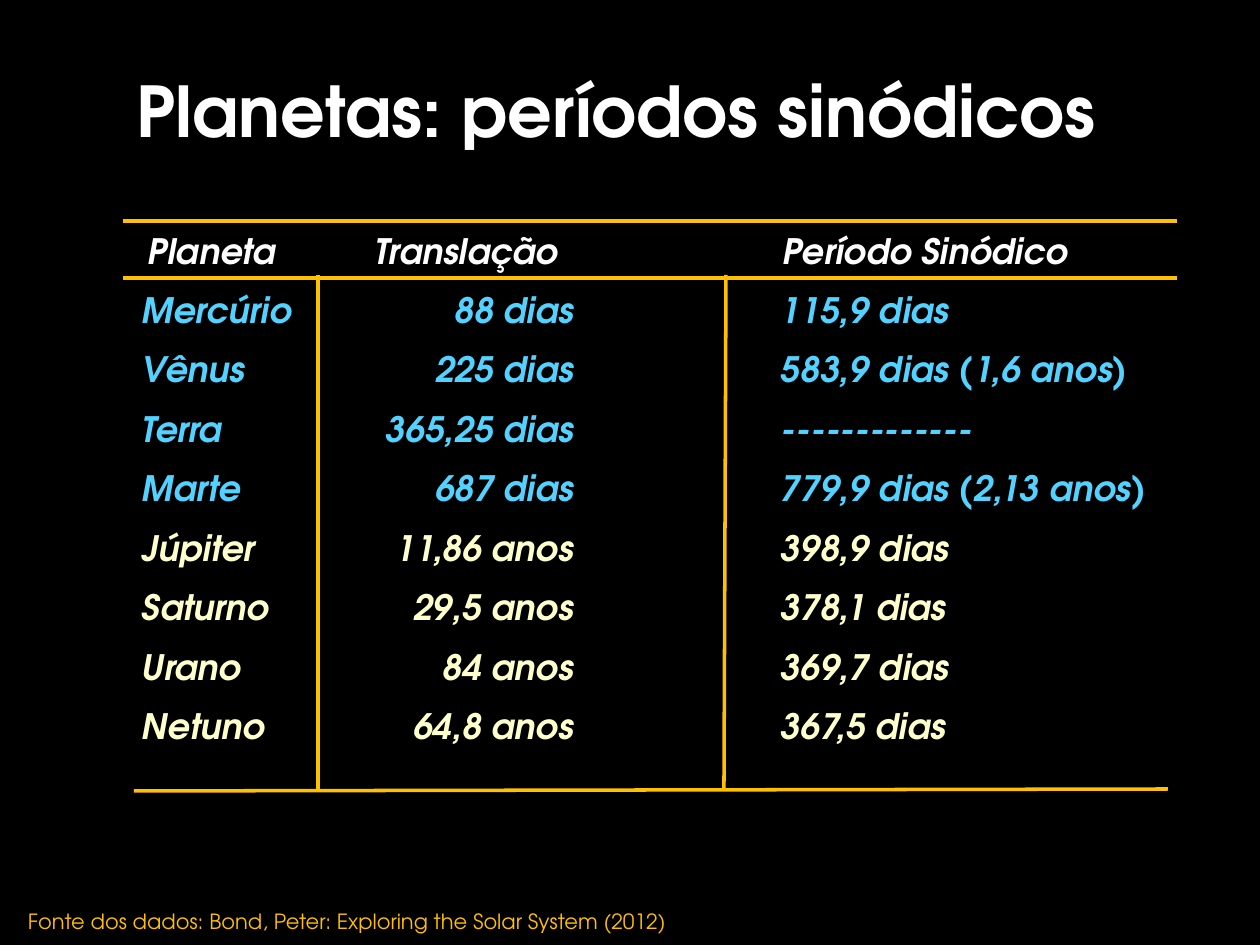
from pptx import Presentation
from pptx.dml.color import RGBColor
from pptx.enum.shapes import MSO_CONNECTOR as Connector
from pptx.enum.text import MSO_ANCHOR as Anchor, PP_ALIGN as Align
from pptx.oxml.ns import qn
from pptx.util import Emu, Pt
from lxml.etree import SubElement

BLACK = RGBColor(0, 0, 0)
WHITE = RGBColor(255, 255, 255)
BLUE = RGBColor(0x53, 0xD2, 0xFF)
CREAM = RGBColor(0xFF, 0xFF, 0xCC)
GOLD = RGBColor(0xFF, 0xC0, 0)
FONT = "TeX Gyre Adventor"
TITLE = "Planetas: períodos sinódicos"
SOURCE = "Fonte dos dados: Bond, Peter: Exploring the Solar System (2012)"
HEADINGS = ("Planeta", "Translação", "Período Sinódico")
INNER = [
    ("Mercúrio", "88 dias", "115,9 dias"),
    ("Vênus", "225 dias", "583,9 dias (1,6 anos)"),
    ("Terra", "365,25 dias", "-------------"),
    ("Marte", "687 dias", "779,9 dias (2,13 anos)"),
]
OUTER = [
    ("Júpiter", "11,86 anos", "398,9 dias"),
    ("Saturno", "29,5 anos", "378,1 dias"),
    ("Urano", "84 anos", "369,7 dias"),
    ("Netuno", "64,8 anos", "367,5 dias"),
]
RULES = [
    (318, 275, 318, 789),
    (134, 791, 1168, 789),
    (726, 275, 724, 790),
    (123, 221, 1177, 221),
    (123, 278, 1177, 278),
]
CELL = dict(name=FONT, size=Pt(20), bold=True, italic=True)
HEADER_STOPS = [(227, "l"), (635, "l")]
ROW_STOPS = [(432, "r"), (639, "l")]


def px(value):
    return Emu(round(value * 914400 / 126))


def add_box(slide, left, top, width, height, indent=13):
    box = slide.shapes.add_textbox(*map(px, (left, top, width, height)))
    frame = box.text_frame
    frame.word_wrap = True
    frame.margin_left = px(indent)
    return frame


def write(para, text, color, font_format):
    span = para.add_run()
    span.text = text
    for name, value in font_format.items():
        setattr(span.font, name, value)
    span.font.color.rgb = color


def set_stops(para, stops):
    tabs = SubElement(para._p.get_or_add_pPr(), qn("a:tabLst"))
    for position, align in stops:
        SubElement(tabs, qn("a:tab"), pos=str(int(px(position))), algn=align)


def add_rule(slide, ends):
    rule = slide.shapes.add_connector(Connector.STRAIGHT, *map(px, ends))
    rule.line.color.rgb = GOLD
    rule.line.width = Pt(2)
    SubElement(rule._element.spPr, qn("a:effectLst"))


def main():
    deck = Presentation()
    deck.slide_width, deck.slide_height = px(1260), px(945)
    slide = deck.slides.add_slide(deck.slide_layouts[5])
    slide.background.fill.solid()
    slide.background.fill.fore_color.rgb = BLACK

    title = slide.shapes.title
    title.left, title.top, title.width, title.height = map(px, (49, 45, 1134, 129))
    title.text_frame.vertical_anchor = Anchor.MIDDLE
    heading = title.text_frame.paragraphs[0]
    heading.alignment = Align.CENTER
    write(heading, TITLE, WHITE, dict(name=FONT, size=Pt(40), bold=True))

    frame = add_box(slide, 129, 282, 1048, 617)
    rows = [(row, BLUE) for row in INNER] + [(row, CREAM) for row in OUTER]
    for index, (row, color) in enumerate(rows):
        para = frame.add_paragraph() if index else frame.paragraphs[0]
        para.space_before = Pt(10 if index else 0)
        set_stops(para, ROW_STOPS)
        write(para, "\t".join(row), color, CELL)

    header = add_box(slide, 126, 223, 1057, 55, indent=22).paragraphs[0]
    set_stops(header, HEADER_STOPS)
    write(header, "\t".join(HEADINGS), WHITE, CELL)

    for ends in RULES:
        add_rule(slide, ends)

    source = add_box(slide, 15, 902, 901, 38).paragraphs[0]
    write(source, SOURCE, GOLD, dict(name=FONT, size=Pt(12)))
    deck.save("out.pptx")


if __name__ == "__main__":
    main()
